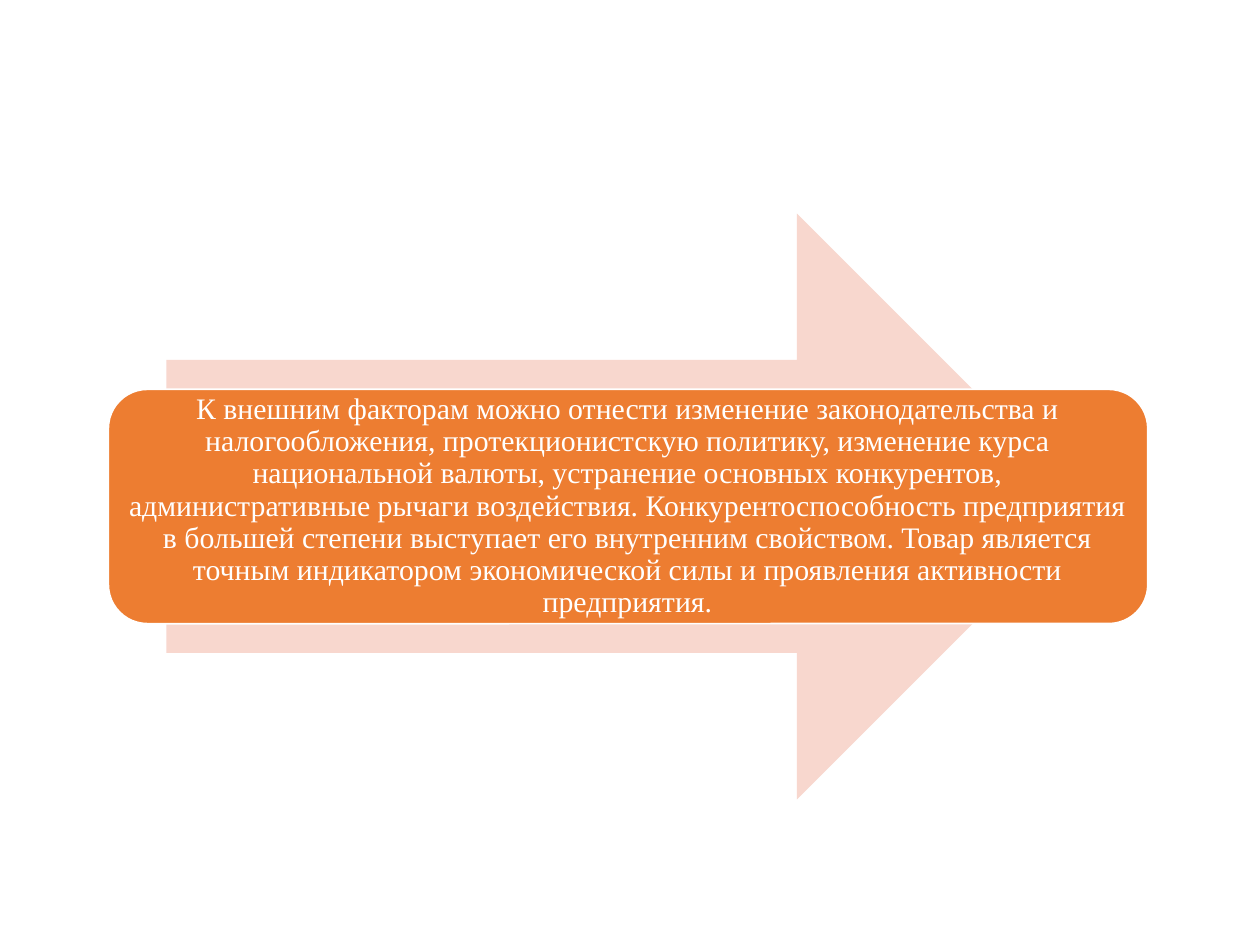
from pptx import Presentation
from pptx.dml.color import RGBColor
from pptx.enum.shapes import MSO_SHAPE as Kind
from pptx.enum.text import MSO_ANCHOR as Anchor, PP_ALIGN as Align
from pptx.util import Inches, Pt

TEXT = (
    "К внешним факторам можно отнести изменение законодательства и "
    "налогообложения, протекционистскую политику, изменение курса "
    "национальной валюты, устранение основных конкурентов, "
    "административные рычаги воздействия. Конкурентоспособность предприятия "
    "в большей степени выступает его внутренним свойством. Товар является "
    "точным индикатором экономической силы и проявления активности "
    "предприятия."
)
SIZE = 10, 7.5
MID = 4.02
ARROW = {"left": 1.32, "width": 7.33, "height": 4.65, "fill": "F8D7CE"}
CARD = {"left": 0.86, "width": 8.25, "height": 1.86, "fill": "ED7D31"}
WHITE = "FFFFFF"
PAD = Inches(0.07)
FRAME = {
    "word_wrap": True,
    "vertical_anchor": Anchor.MIDDLE,
    "margin_left": PAD,
    "margin_right": Inches(0.08),
    "margin_top": PAD,
    "margin_bottom": PAD,
}
PARA = {"alignment": Align.CENTER, "line_spacing": 0.9}
FONT = {"name": "Times New Roman", "size": Pt(17)}


def style(item, values):
    for name, value in values.items():
        setattr(item, name, value)


def paint(part, color):
    part.solid()
    part.fore_color.rgb = RGBColor.from_string(color)


def draw(slide, kind, box):
    top = MID - box["height"] / 2
    place = box["left"], top, box["width"], box["height"]
    shape = slide.shapes.add_shape(kind, *map(Inches, place))
    shape.shadow.inherit = False
    paint(shape.fill, box["fill"])
    shape.line.fill.background()
    return shape


def write(shape, text):
    frame = shape.text_frame
    style(frame, FRAME)
    para = frame.paragraphs[0]
    style(para, PARA)
    run = para.add_run()
    run.text = text
    style(run.font, FONT)
    paint(run.font.fill, WHITE)


def main():
    """Build the slide: a text card centred on a wide arrow."""
    deck = Presentation()
    deck.slide_width, deck.slide_height = map(Inches, SIZE)
    slide = deck.slides.add_slide(deck.slide_layouts[6])
    draw(slide, Kind.RIGHT_ARROW, ARROW)
    card = draw(slide, Kind.ROUNDED_RECTANGLE, CARD)
    paint(card.line.fill, WHITE)
    card.line.width = Pt(1)
    write(card, TEXT)
    deck.save("out.pptx")


if __name__ == "__main__":
    main()
